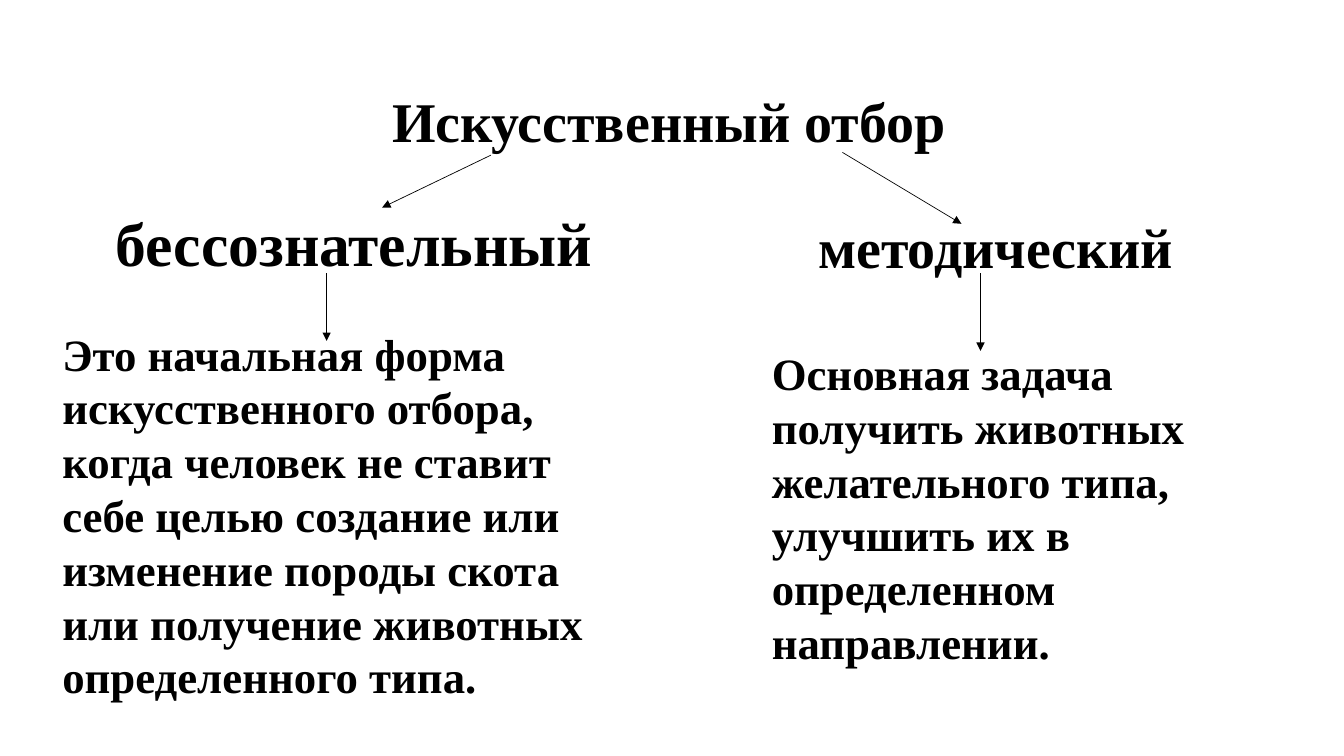
from lxml import etree
from pptx import Presentation
from pptx.dml.color import RGBColor
from pptx.enum import shapes, text
from pptx.oxml import ns
from pptx.util import Cm, Pt

FONT = "Times New Roman"
INK = "000000"


def colour(hex_code):
    return RGBColor.from_string(hex_code)


def add_label(slide, wording, box, size, wrap=False):
    """Place bold text in a box of (left, top, width, height) in cm; return its paragraph."""
    label = slide.shapes.add_textbox(*(Cm(length) for length in box))
    frame = label.text_frame
    frame.word_wrap = wrap
    frame.auto_size = text.MSO_AUTO_SIZE.SHAPE_TO_FIT_TEXT
    paragraph = frame.paragraphs[0]
    run = paragraph.add_run()
    run.text = wording
    run.font.name = FONT
    run.font.size = Pt(size)
    run.font.bold = True
    run.font.color.rgb = colour(INK)
    return paragraph


def add_heading(slide, wording, box):
    """Add the justified main heading with its first-line indent."""
    heading = add_label(slide, wording, box, 40)
    heading.alignment = text.PP_ALIGN.JUSTIFY
    heading.line_spacing = 1.07
    heading._p.get_or_add_pPr().set("indent", str(Cm(1.25)))


def add_arrow(slide, start, end):
    arrow = slide.shapes.add_connector(
        shapes.MSO_CONNECTOR.STRAIGHT, *(Cm(length) for length in start + end))
    arrow.line.color.rgb = colour(INK)
    arrow.line.width = Pt(0.5)
    etree.SubElement(arrow.line._get_or_add_ln(), ns.qn("a:tailEnd"), type="triangle")
    etree.SubElement(arrow._element.spPr, ns.qn("a:effectLst"))


def add_branch(slide, kind, kind_box, kind_size, meaning, meaning_box, arrows):
    """Add one kind of selection, its explanation and the arrows leading to both."""
    add_label(slide, kind, kind_box, kind_size)
    add_label(slide, meaning, meaning_box, 32, wrap=True)
    for start, end in arrows:
        add_arrow(slide, start, end)


def main():
    deck = Presentation()
    deck.slide_width, deck.slide_height = Cm(33.87), Cm(19.05)
    slide = deck.slides.add_slide(deck.slide_layouts[6])

    add_heading(slide, "Искусственный отбор", (8.38, 1.93, 15.88, 2.01))
    add_branch(
        slide, "бессознательный", (2.67, 5.05, 12.65, 2.13), 44,
        "Это начальная форма искусственного отбора, когда человек не ставит "
        "себе целью создание или изменение породы скота или получение "
        "животных определенного типа.",
        (1.32, 8.1, 14.15, 9.83),
        [((12.37, 3.91), (9.63, 5.23)), ((8.23, 6.88), (8.23, 8.59))])
    add_branch(
        slide, "методический", (20.37, 5.23, 9.55, 1.96), 40,
        "Основная задача получить животных желательного типа, улучшить их "
        "в определенном направлении.",
        (19.2, 8.59, 12.98, 8.46),
        [((21.23, 3.84), (24.23, 5.64)), ((24.71, 6.88), (24.71, 8.84))])

    deck.save("out.pptx")


if __name__ == "__main__":
    main()
